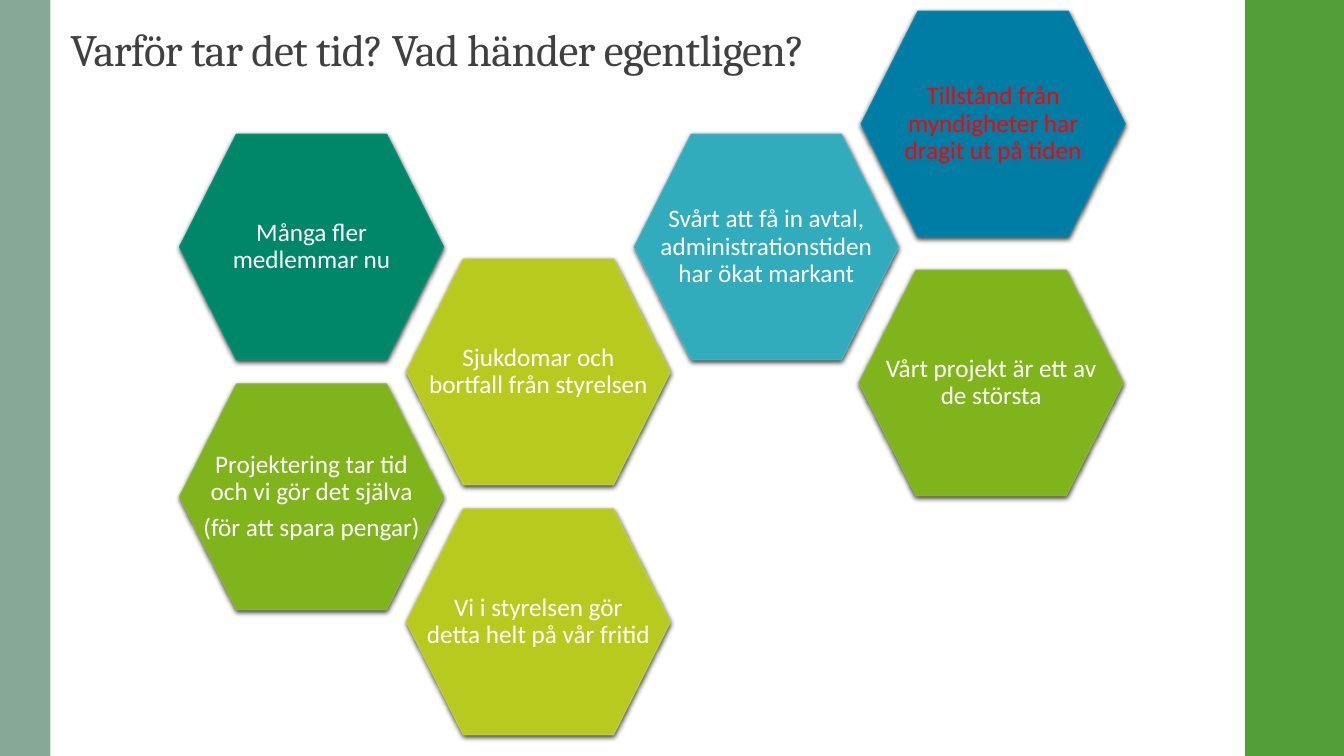
from lxml.etree import SubElement
from pptx import Presentation
from pptx.dml.color import RGBColor
from pptx.enum.shapes import MSO_SHAPE
from pptx.enum.text import MSO_ANCHOR, PP_ALIGN
from pptx.oxml.ns import qn
from pptx.util import Inches, Pt

SLIDE_WIDTH, SLIDE_HEIGHT = 13.33, 7.5
HEX_WIDTH, HEX_HEIGHT, HEX_SLANT = 2.62, 2.24, 0.565

# left, top, fill, outline, text colour, paragraphs
REASONS = [
    (1.78, 3.81, "7FB41B", "8AB833", "FFFFFF",
     ["Projektering tar tid och vi gör det själva", "(för att spara pengar)"]),
    (4.03, 2.57, "B9CA1F", "C0CF3A", "FFFFFF",
     ["Sjukdomar och bortfall från styrelsen"]),
    (1.78, 1.33, "008669", "029676", "FFFFFF", ["Många fler medlemmar nu"]),
    (6.29, 1.33, "31ACBD", "4AB5C4", "FFFFFF",
     ["Svårt att få in avtal, administrationstiden har ökat markant"]),
    (8.54, 0.11, "007DA4", "0989B1", "FF0000",
     ["Tillstånd från myndigheter har dragit ut på tiden"]),
    (8.52, 2.68, "7FB41B", "8AB833", "FFFFFF",
     ["Vårt projekt är ett av de största"]),
    (4.03, 5.05, "B9CA1F", "C0CF3A", "FFFFFF",
     ["Vi i styrelsen gör detta helt på vår fritid"]),
]


def color(hex_value):
    return RGBColor.from_string(hex_value)


def fill_solid(shape, hex_value):
    shape.fill.solid()
    shape.fill.fore_color.rgb = color(hex_value)
    shape.shadow.inherit = False


def add_side_band(slide, left, width, fill):
    band = slide.shapes.add_shape(MSO_SHAPE.RECTANGLE, Inches(left), 0,
                                  Inches(width), Inches(SLIDE_HEIGHT))
    fill_solid(band, fill)
    band.line.fill.background()


def add_title(slide, left, top, width, height, text):
    title = slide.shapes.add_textbox(Inches(left), Inches(top),
                                     Inches(width), Inches(height))
    frame = title.text_frame
    frame.word_wrap = True
    frame.vertical_anchor = MSO_ANCHOR.MIDDLE
    paragraph = frame.paragraphs[0]
    paragraph.text = text
    paragraph.line_spacing = 0.9
    paragraph.font.name = "Cambria"
    paragraph.font.size = Pt(32)
    paragraph.font.color.rgb = color("404040")
    # Slightly tightened letters
    paragraph.runs[0].font._element.set("spc", "-50")


def add_soft_shadow(shape):
    effects = shape._element.spPr.find(qn("a:effectLst"))
    shadow = SubElement(effects, qn("a:outerShdw"), blurRad=str(Pt(4)),
                        dist=str(Pt(1.2)), dir="5400000", algn="ctr",
                        rotWithShape="0")
    black = SubElement(shadow, qn("a:srgbClr"), val="000000")
    SubElement(black, qn("a:alpha"), val="75000")


def add_reason(slide, left, top, fill, outline, text_color, paragraphs):
    # Hexagon outline, clockwise from the left corner
    right, bottom = left + HEX_WIDTH, top + HEX_HEIGHT
    middle = top + HEX_HEIGHT / 2
    corners = [(left, middle), (left + HEX_SLANT, top),
               (right - HEX_SLANT, top), (right, middle),
               (right - HEX_SLANT, bottom), (left + HEX_SLANT, bottom)]
    points = [(Inches(x), Inches(y)) for x, y in corners]
    builder = slide.shapes.build_freeform(*points[0])
    builder.add_line_segments(points[1:], close=True)
    hexagon = builder.convert_to_shape()
    fill_solid(hexagon, fill)
    hexagon.line.color.rgb = color(outline)
    hexagon.line.width = Pt(0.75)
    add_soft_shadow(hexagon)

    # Text
    frame = hexagon.text_frame
    frame.word_wrap = True
    frame.vertical_anchor = MSO_ANCHOR.MIDDLE
    frame.margin_left = frame.margin_right = Inches(0.19)
    frame.margin_top = frame.margin_bottom = Inches(0.18)
    frame.text = "\n".join(paragraphs)
    for paragraph in frame.paragraphs:
        paragraph.alignment = PP_ALIGN.CENTER
        paragraph.line_spacing = 0.9
        paragraph.space_after = Pt(6.3)
        paragraph.font.name = "Calibri"
        paragraph.font.size = Pt(18)
        paragraph.font.color.rgb = color(text_color)


def main():
    presentation = Presentation()
    presentation.slide_width = Inches(SLIDE_WIDTH)
    presentation.slide_height = Inches(SLIDE_HEIGHT)
    slide = presentation.slides.add_slide(presentation.slide_layouts[6])

    # Side bands
    add_side_band(slide, 12.35, SLIDE_WIDTH - 12.35, "549E39")
    add_side_band(slide, 0, 0.5, "87A896")

    # Title and reasons
    add_title(slide, 0.6, 0.01, 8.17, 1.01,
              "Varför tar det tid? Vad händer egentligen?")
    for reason in REASONS:
        add_reason(slide, *reason)

    presentation.save("out.pptx")


if __name__ == "__main__":
    main()
